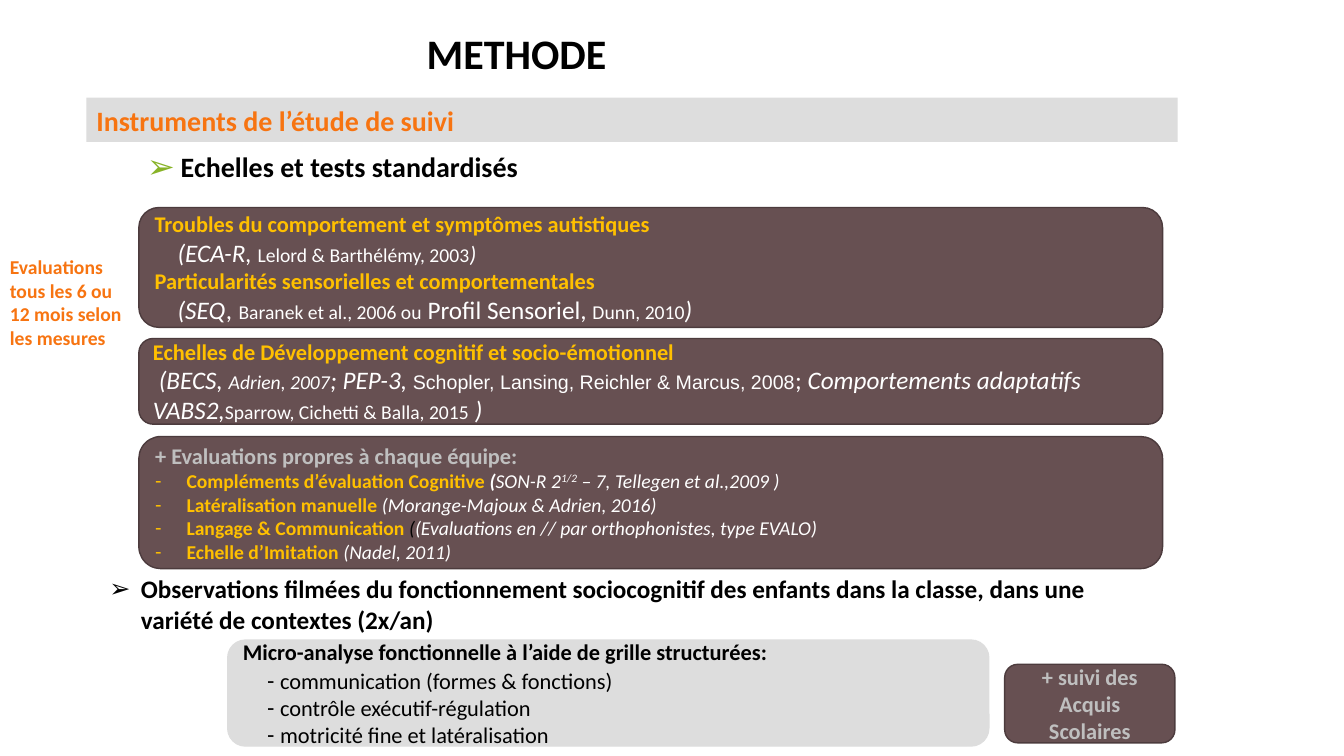
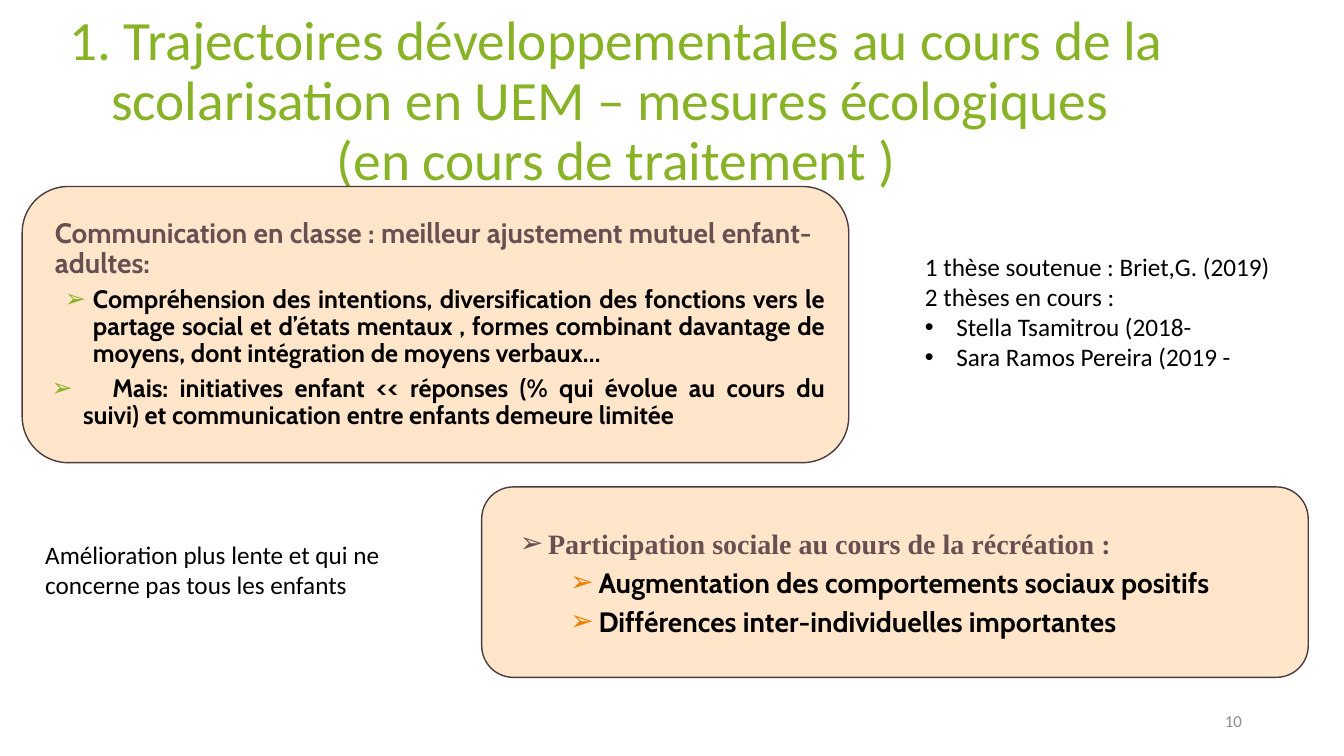
import pptx
import pptx.dml.color
import pptx.enum.shapes
import pptx.enum.text
import pptx.oxml
import pptx.oxml.ns
import pptx.util

Cm = pptx.util.Cm
Pt = pptx.util.Pt
qn = pptx.oxml.ns.qn
ALIGN = pptx.enum.text.PP_ALIGN
ANCHOR = pptx.enum.text.MSO_ANCHOR
SHAPES = pptx.enum.shapes.MSO_SHAPE

BLACK, WHITE, SILVER, GREY = "000000", "FFFFFF", "BFBFBF", "8C8C8C"
GREEN, ORANGE, AMBER, GOLD = "88B327", "F77411", "EF7D00", "FFC000"
PLUM, PLUM_EDGE, PEACH, PALE = "675052", "4C3B3D", "FFE5C9", "DDDDDD"
ARROW = "➢"

CARD_LEFT, CARD_WIDTH = 3.5, 25.8
GOLD_BOLD = {"color": GOLD, "bold": True, "italic": False}
SMALL = {"size": 14, "italic": False}


def rgb(code):
    """Turn a hex string into a colour."""
    return pptx.dml.color.RGBColor.from_string(code)


def sub(parent, tag, **attributes):
    """Append a drawing element with the given attributes."""
    element = parent.makeelement(qn(tag), attributes)
    parent.append(element)
    return element


def style_font(font, size=None, color=None, bold=None, italic=None, name=None):
    """Apply only the font settings that are given."""
    if size is not None:
        font.size = Pt(size)
    if color is not None:
        font.color.rgb = rgb(color)
    if bold is not None:
        font.bold = bold
    if italic is not None:
        font.italic = italic
    if name is not None:
        font.name = name


def set_bullet(properties, bullet, color, percent):
    """Give a paragraph its bullet, or switch the inherited one off."""
    if not bullet:
        sub(properties, "a:buNone")
        return
    if color:
        sub(sub(properties, "a:buClr"), "a:srgbClr", val=color)
    sub(properties, "a:buSzPct", val=str(percent * 1000))
    sub(properties, "a:buFont", typeface="Arial")
    sub(properties, "a:buChar", char=bullet)


def add_runs(paragraph, runs):
    """Add runs given as plain strings or (text, font settings) pairs."""
    for run_text in [runs] if isinstance(runs, str) else runs:
        text, settings = (run_text, {}) if isinstance(run_text, str) else run_text
        settings = dict(settings)
        baseline = settings.pop("baseline", None)
        for position, line in enumerate(text.split("\n")):
            if position:
                paragraph.add_line_break()
            run = paragraph.add_run()
            run.text = line
            style_font(run.font, **settings)
            if baseline:
                run._r.get_or_add_rPr().set("baseline", str(baseline * 1000))


def write(frame, runs, margin=0, indent=0, bullet=None, bullet_color=None,
          bullet_percent=100, tab=None, align=ALIGN.LEFT, before=0, spacing=1.0,
          level=0, name="Calibri", **font):
    """Write one paragraph, using the empty first one when it is free."""
    first = frame.paragraphs[0]
    paragraph = frame.add_paragraph() if first.runs else first
    properties = paragraph._p.get_or_add_pPr()
    properties.set("marL", str(Cm(margin)))
    properties.set("indent", str(Cm(indent)))
    set_bullet(properties, bullet, bullet_color, bullet_percent)
    if tab:
        sub(sub(properties, "a:tabLst"), "a:tab", pos=str(Cm(tab)), algn="l")
    paragraph.level = level
    paragraph.alignment = align
    paragraph.space_before = Pt(before)
    paragraph.space_after = Pt(0)
    paragraph.line_spacing = spacing
    style_font(paragraph.font, name=name, **font)
    add_runs(paragraph, runs)


def prepare(shape, anchor, wrap=True):
    """Set wrapping and anchoring and return the text frame."""
    frame = shape.text_frame
    frame.word_wrap = wrap
    frame.auto_size = pptx.enum.text.MSO_AUTO_SIZE.NONE
    frame.vertical_anchor = anchor
    return frame


def paint(shape, fill, edge=None):
    """Fill a shape and draw its outline."""
    shape.fill.solid()
    shape.fill.fore_color.rgb = rgb(fill)
    if edge:
        shape.line.color.rgb = rgb(edge)
        shape.line.width = Pt(1)
    else:
        shape.line.fill.background()


def place(placeholder, box, anchor):
    """Move a placeholder and return its text frame."""
    placeholder.left, placeholder.top, placeholder.width, placeholder.height = map(Cm, box)
    return prepare(placeholder, anchor)


def add_panel(slide, box, fill, edge=None, kind=SHAPES.ROUNDED_RECTANGLE):
    """Add a filled panel and return its text frame."""
    panel = slide.shapes.add_shape(kind, *map(Cm, box))
    panel.shadow.inherit = False
    paint(panel, fill, edge)
    return prepare(panel, ANCHOR.MIDDLE)


def add_card(slide, top, height):
    """Add one of the full-width dark cards."""
    return add_panel(slide, (CARD_LEFT, top, CARD_WIDTH, height), PLUM, PLUM_EDGE)


def add_label(slide, box, anchor=ANCHOR.TOP, wrap=True):
    """Add a text box and return its text frame."""
    return prepare(slide.shapes.add_textbox(*map(Cm, box)), anchor, wrap)


def add_slide(deck, title, title_box, **title_style):
    """Add a title and content slide with its title in place."""
    slide = deck.slides.add_slide(deck.slide_layouts[1])
    write(place(slide.shapes.title, title_box, ANCHOR.MIDDLE), title,
          spacing=0.9, **title_style)
    return slide


def build_method(deck):
    """Build the slide on the instruments of the study."""
    slide = add_slide(deck, "METHODE", (10.5, 0.25, 16.8, 2.3),
                      size=30, color=BLACK, bold=True)
    scales = place(slide.placeholders[1], (2.18, 3.73, 26.8, 1.2), ANCHOR.TOP)
    write(scales, "Echelles et tests standardisés", margin=2.12, indent=-0.85,
          bullet=ARROW, bullet_color=GREEN, bullet_percent=120, spacing=0.9,
          level=1, size=20, color=BLACK, bold=True)

    banner = add_panel(slide, (2.18, 2.46, 27.5, 1.12), PALE, kind=SHAPES.RECTANGLE)
    write(banner, "Instruments de l’étude de suivi", size=20, color=ORANGE, bold=True)

    development = add_card(slide, 8.53, 2.16)
    write(development, "Echelles de Développement cognitif et socio-émotionnel",
          size=16, color=GOLD, bold=True)
    write(development, [
        "(BECS, ", ("Adrien, 2007", {"size": 14}), "; PEP-3, ",
        ("Schopler, Lansing, Reichler & Marcus, 2008", {**SMALL, "name": "Arial"}),
        ("; ", {"italic": False}), "Comportements adaptatifs VABS2,",
        ("Sparrow, Cichetti & Balla, 2015", SMALL), " )",
    ], indent=0.15, size=18, color=WHITE, italic=True)

    behaviour = add_card(slide, 5.23, 3.02)
    topics = [
        ("Troubles du comportement et symptômes autistiques",
         ["(ECA-R, ", ("Lelord & Barthélémy, 2003", SMALL), (")", {"size": 16})]),
        ("Particularités sensorielles et comportementales",
         ["(SEQ, ", ("Baranek et al., 2006 ou", SMALL),
          (" Profil Sensoriel, ", {"italic": False}), ("Dunn, 2010", SMALL), ")"]),
    ]
    for topic, tools in topics:
        write(behaviour, topic, size=16, color=GOLD, bold=True)
        write(behaviour, tools, margin=0.58, size=18, color=WHITE, italic=True)

    analysis = add_panel(slide, (5.74, 16.13, 19.18, 2.67), PALE, PALE)
    write(analysis, "Micro-analyse fonctionnelle à l’aide de grille structurées:",
          size=16, color=BLACK, bold=True)
    for focus, gap in [("communication (formes & fonctions)", 2),
                       ("contrôle exécutif-régulation", 0),
                       ("motricité fine et latéralisation", 0)]:
        write(analysis, focus, margin=0.94, indent=-0.33, bullet="-",
              before=gap, size=16, color=BLACK)

    schooling = add_panel(slide, (25.32, 16.74, 4.29, 1.98), PLUM, PLUM_EDGE)
    write(schooling, "+ suivi des Acquis Scolaires", align=ALIGN.CENTER,
          size=16, color=SILVER, bold=True)

    team = add_card(slide, 11, 3.33)
    write(team, "+ Evaluations propres à chaque équipe:", size=16, color=SILVER, bold=True)
    evaluations = [
        ("Compléments d’évaluation Cognitive ",
         [("(", {"bold": True}), "SON-R 2", ("1/2", {"baseline": 30}),
          " – 7, Tellegen et al.,2009 )"]),
        ("Latéralisation manuelle ", ["(Morange-Majoux & Adrien, 2016)"]),
        ("Langage & Communication ",
         [("(", {"color": BLACK}), "(Evaluations en // par orthophonistes, type EVALO)"]),
        ("Echelle d’Imitation ", ["(Nadel, 2011)"]),
    ]
    for skill, source in evaluations:
        write(team, [(skill, GOLD_BOLD)] + source, margin=0.79, indent=-0.79,
              bullet="-", bullet_color=GOLD, size=14, color=WHITE, italic=True)

    write(add_label(slide, (2.51, 14.33, 26.8, 1.8)),
          "Observations filmées du fonctionnement sociocognitif des enfants "
          "dans la classe, dans une variété de contextes (2x/an)",
          margin=0.79, indent=-0.79, bullet=ARROW, size=18, color=BLACK, bold=True)
    write(add_label(slide, (0, 6.3, 3.5, 2.64)),
          "Evaluations tous les 6 ou 12 mois selon les mesures",
          size=14, color=ORANGE, bold=True)


def build_trajectories(deck):
    """Build the slide on developmental trajectories."""
    slide = add_slide(
        deck, "1. Trajectoires développementales au cours de la scolarisation en UEM "
        "– mesures écologiques \n(en cours de traitement )", (1.04, 1.27, 28.98, 2.62),
        align=ALIGN.CENTER, size=39.6, color=GREEN)
    write(add_label(slide, (23.93, 17.65, 7.62, 1.02), ANCHOR.MIDDLE), "10",
          align=ALIGN.RIGHT, size=12, color=GREY)

    body = slide.placeholders[1]
    communication = place(body, (0.56, 4.7, 20.83, 6.96), ANCHOR.MIDDLE)
    outline = body._element.spPr.makeelement(qn("a:prstGeom"), {"prst": "roundRect"})
    sub(outline, "a:avLst")
    body._element.spPr.insert(1, outline)
    paint(body, PEACH, PLUM_EDGE)
    write(communication,
          "Communication en classe : meilleur ajustement mutuel enfant-adultes:",
          margin=0.23, spacing=0.9, name="Cabin", size=20, color=PLUM, bold=True)
    findings = [
        ("Compréhension des intentions, diversification des fonctions vers le partage "
         "social et d’états mentaux , formes combinant davantage de moyens, dont "
         "intégration de moyens verbaux…", 1.19, -0.71, None, 1),
        ("\tMais: initiatives enfant << réponses (% qui évolue au cours du suivi) et "
         "communication entre enfants demeure limitée", 0.94, -0.79, 1.68, 2),
    ]
    for finding, margin, indent, tab, level in findings:
        write(communication, finding, margin=margin, indent=indent, bullet=ARROW,
              bullet_color=GREEN, tab=tab, align=ALIGN.JUSTIFY, before=5, spacing=0.9,
              level=level, name="Cabin", size=18, color=BLACK, bold=True)

    participation = add_panel(slide, (12.14, 12.27, 20.83, 4.8), PEACH, PLUM_EDGE)
    write(participation, "Participation sociale au cours de la récréation :",
          margin=1.19, indent=-0.71, bullet=ARROW, bullet_color=PLUM, level=1,
          name="Times New Roman", size=20, color=PLUM, bold=True)
    for outcome in ("Augmentation des comportements sociaux positifs",
                    "Différences inter-individuelles importantes"):
        write(participation, outcome, margin=2.46, indent=-0.71, bullet=ARROW,
              bullet_color=AMBER, align=ALIGN.JUSTIFY, before=4, level=2,
              name="Cabin", size=20, color=BLACK, bold=True)

    theses = add_label(slide, (23.06, 6.2, 9.3, 3.33), wrap=False)
    for heading in ("1 thèse soutenue : Briet,G. (2019)", "2 thèses en cours :"):
        write(theses, heading, size=18, color=BLACK)
    for candidate in ("Stella Tsamitrou (2018-", "Sara Ramos Pereira (2019 -"):
        write(theses, candidate, margin=0.79, indent=-0.79, bullet="•",
              size=18, color=BLACK)

    write(add_label(slide, (0.89, 13.46, 10.03, 1.8)),
          "Amélioration plus lente et qui ne concerne pas tous les enfants",
          size=18, color=BLACK)


def main():
    """Build both slides and save the deck."""
    deck = pptx.Presentation()
    deck.slide_width, deck.slide_height = Cm(33.87), Cm(19.05)
    build_method(deck)
    build_trajectories(deck)
    deck.save("out.pptx")


if __name__ == "__main__":
    main()
